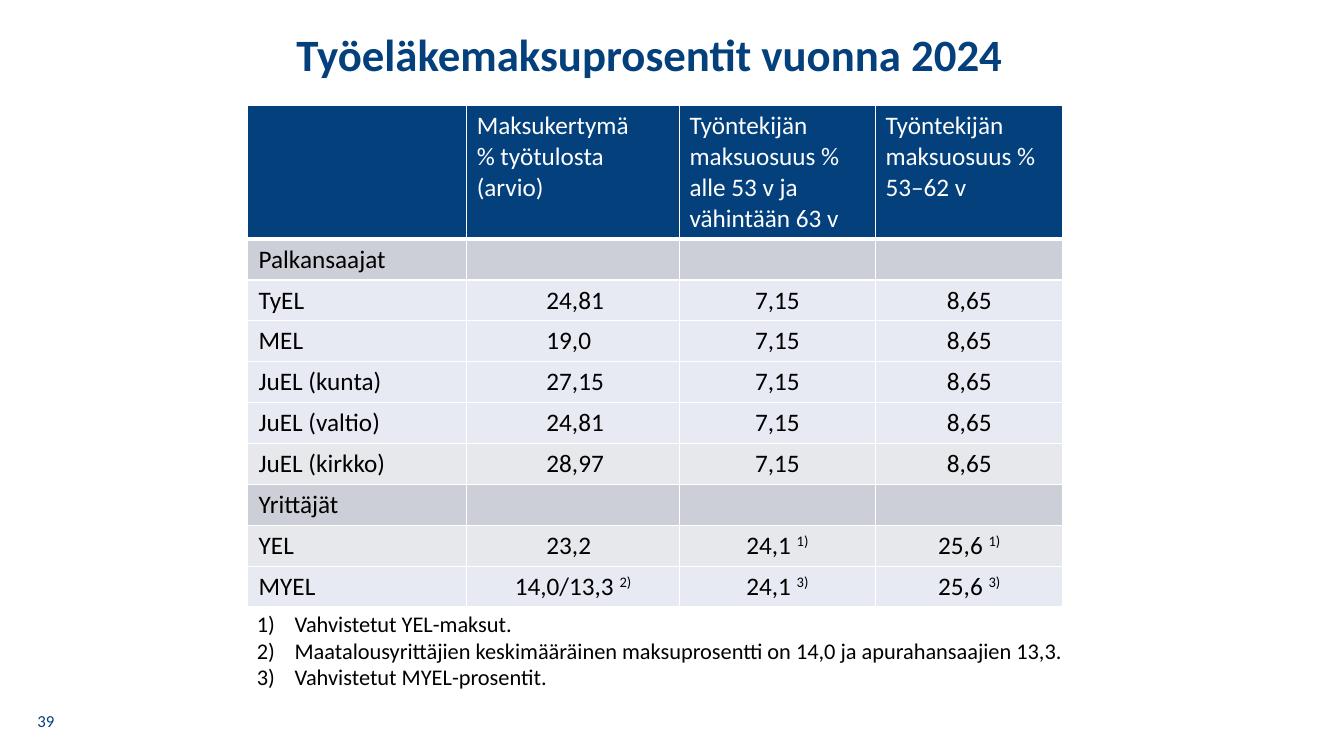
from lxml import etree
from pptx import Presentation
from pptx.dml.color import RGBColor
from pptx.enum.text import MSO_ANCHOR, PP_ALIGN
from pptx.oxml.ns import qn
from pptx.util import Pt

LEFT, CENTER = PP_ALIGN.LEFT, PP_ALIGN.CENTER
TOP, MIDDLE = MSO_ANCHOR.TOP, MSO_ANCHOR.MIDDLE
COLORS = {
    "navy": "03407C",
    "white": "FFFFFF",
    "black": "000000",
    "group": "CCCFD7",
    "blue_grey": "E7E9F3",
    "grey": "E7E8EC",
}


def write_paragraphs(frame, lines, size, color, alignment=LEFT, bold=False):
    """Write one paragraph per line; text after ^ becomes superscript."""
    for index, line in enumerate(lines):
        paragraph = frame.paragraphs[0] if index == 0 else frame.add_paragraph()
        paragraph.alignment = alignment
        for part, text in enumerate(line.split("^")):
            run = paragraph.add_run()
            run.text = text
            font_format = {"name": "Calibri", "size": Pt(size), "bold": bold}
            for name, value in font_format.items():
                setattr(run.font, name, value)
            run.font.color.rgb = RGBColor.from_string(COLORS[color])
            if part:
                run._r.get_or_add_rPr().set("baseline", "30000")


def add_text(position, lines, size, color, alignment=LEFT, anchor=TOP, bold=False):
    box = slide.shapes.add_textbox(*[Pt(length) for length in position])
    frame = box.text_frame
    frame.word_wrap = True
    frame.vertical_anchor = anchor
    write_paragraphs(frame, lines, size, color, alignment, bold)
    return frame


presentation = Presentation()
presentation.slide_width, presentation.slide_height = Pt(960), Pt(540)
slide = presentation.slides.add_slide(presentation.slide_layouts[6])

# Page number, footnotes and title
add_text((14.4, 500.4, 36.7, 28.8), ["39"], 12, "navy", CENTER, MIDDLE)

footnotes = add_text((176.4, 432, 623.5, 65.5), [
    "Vahvistetut YEL-maksut.",
    "Maatalousyrittäjien keskimääräinen maksuprosentti on 14,0 ja apurahansaajien 13,3.",
    "Vahvistetut MYEL-prosentit.",
], 16, "black")
for paragraph in footnotes.paragraphs:
    properties = paragraph._p.get_or_add_pPr()
    properties.set("marL", str(Pt(27)))
    properties.set("indent", str(Pt(-27)))
    etree.SubElement(properties, qn("a:buFont"), typeface="+mj-lt")
    etree.SubElement(properties, qn("a:buAutoNum"), type="arabicParenR")

title = add_text((-2.9, 20.2, 933.8, 54.7), ["Työeläkemaksuprosentit vuonna 2024"],
                 32, "navy", CENTER, bold=True)
title.paragraphs[0].line_spacing = 0.9

# Contribution table: row fill, then cell texts
rows = [
    ("navy", "", "Maksukertymä\n% työtulosta (arvio)",
     "Työntekijän\nmaksuosuus %\nalle 53 v ja\nvähintään 63 v",
     "Työntekijän\nmaksuosuus %\n53–62 v"),
    ("group", "Palkansaajat", "", "", ""),
    ("blue_grey", "TyEL", "24,81", "7,15", "8,65"),
    ("blue_grey", "MEL", "19,0", "7,15", "8,65"),
    ("blue_grey", "JuEL (kunta)", "27,15", "7,15", "8,65"),
    ("blue_grey", "JuEL (valtio)", "24,81", "7,15", "8,65"),
    ("grey", "JuEL (kirkko)", "28,97", "7,15", "8,65"),
    ("group", "Yrittäjät", "", "", ""),
    ("grey", "YEL", "23,2", "24,1 ^1)", "25,6 ^1)"),
    ("blue_grey", "MYEL", "14,0/13,3 ^2)", "24,1 ^3)", "25,6 ^3)"),
]
column_widths = [157, 152, 140, 134]
header_height, row_height = 95.2, 29.2
table = slide.shapes.add_table(
    len(rows), len(column_widths), Pt(176.4), Pt(75.6), Pt(sum(column_widths)),
    Pt(header_height + row_height * (len(rows) - 1))).table
table.first_row = table.horz_banding = False
for column, width in zip(table.columns, column_widths):
    column.width = Pt(width)

for row_index, (fill, *texts) in enumerate(rows):
    is_header = row_index == 0
    table.rows[row_index].height = Pt(header_height if is_header else row_height)
    for column_index, text in enumerate(texts):
        cell = table.cell(row_index, column_index)
        cell_properties = cell._tc.get_or_add_tcPr()
        for side in ("lnL", "lnR", "lnT", "lnB"):
            width = 3 if is_header and side == "lnB" else 1
            border = etree.SubElement(cell_properties, qn(f"a:{side}"), w=str(Pt(width)))
            border_fill = etree.SubElement(border, qn("a:solidFill"))
            etree.SubElement(border_fill, qn("a:srgbClr"), val=COLORS["white"])
        cell.fill.solid()
        cell.fill.fore_color.rgb = RGBColor.from_string(COLORS[fill])

        alignment = LEFT if is_header or column_index < 2 else CENTER
        if column_index == 0 and not is_header:
            cell.margin_left = Pt(8.4)
        elif column_index == 1 and "^" in text:
            alignment = CENTER
        elif column_index == 1 and text and not is_header:
            cell.margin_left, cell.margin_right = Pt(57), Pt(20)
        if text:
            write_paragraphs(cell.text_frame, text.split("\n"), 18,
                             "white" if is_header else "black", alignment)

presentation.save("out.pptx")
